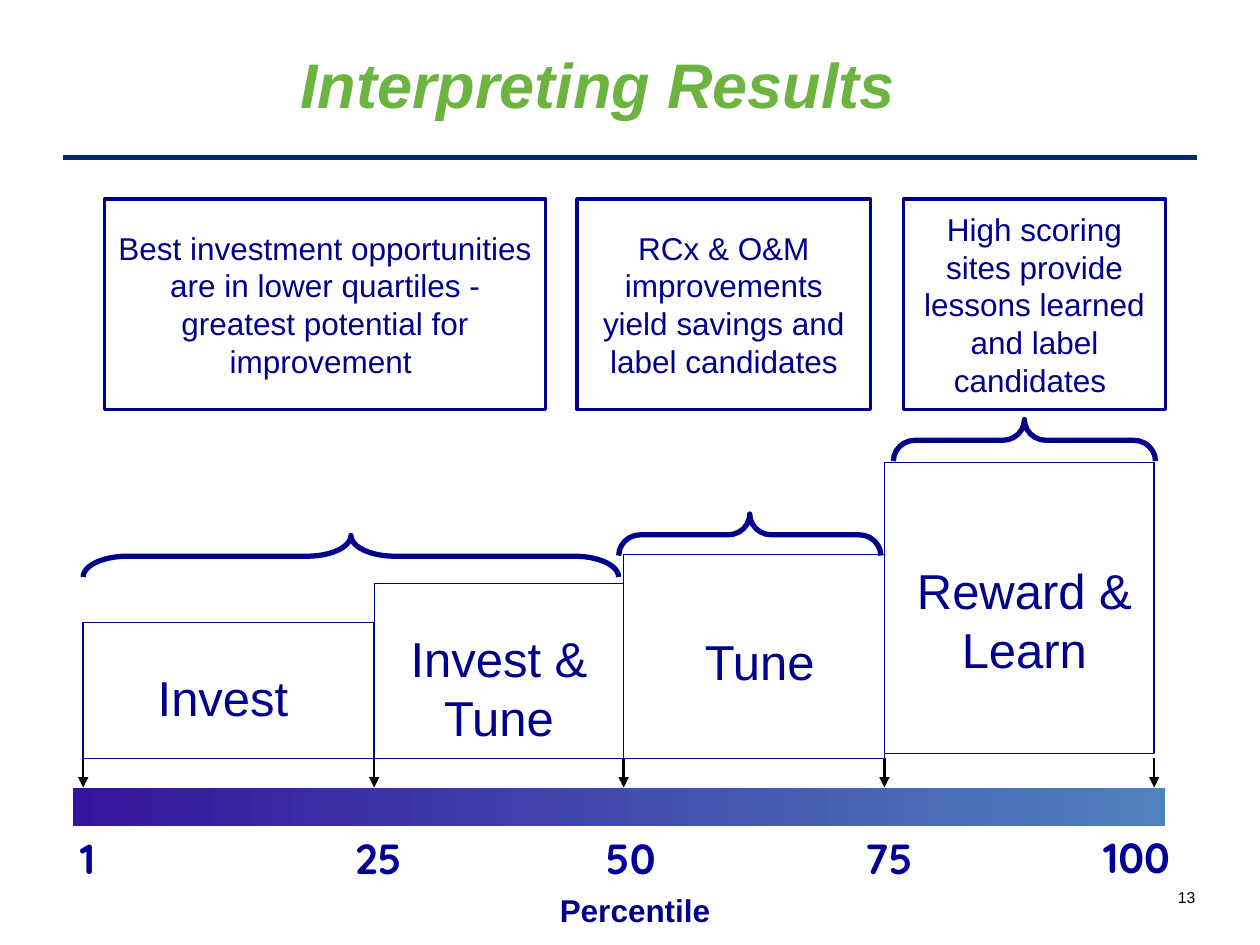
"""Build the Interpreting Results slide with python-pptx."""
from dataclasses import dataclass

import pptx
import pptx.dml.color
import pptx.enum.shapes
import pptx.enum.text
import pptx.oxml
import pptx.oxml.ns
import pptx.util

Inches = pptx.util.Inches
Pt = pptx.util.Pt
Color = pptx.dml.color.RGBColor.from_string
Kind = pptx.enum.shapes.MSO_SHAPE
Align = pptx.enum.text.PP_ALIGN
Anchor = pptx.enum.text.MSO_ANCHOR


@dataclass(frozen=True)
class Theme:
    """Colours, fonts and type sizes."""
    green: str = "6DB33F"
    rule: str = "032B6D"
    ink: str = "00008C"
    edge: str = "000080"
    mark: str = "000099"
    dark: str = "34149C"
    light: str = "4F81BD"
    black: str = "000000"
    white: str = "FFFFFF"
    face: str = "Arial"
    round: str = "Quicksand"
    head: int = 36
    step: int = 28
    tick: int = 24
    body: int = 18
    page: int = 9


@dataclass(frozen=True)
class Box:
    """A place on the slide in inches."""
    left: float
    top: float
    width: float
    height: float

    def frame(self) -> tuple:
        """Return the four lengths."""
        return tuple(Inches(v) for v in (self.left, self.top, self.width, self.height))


@dataclass(frozen=True)
class Step:
    """One quartile block with its label."""
    top: float
    base: float
    text: str
    label: Box


@dataclass(frozen=True)
class Note:
    """A framed comment."""
    left: float
    width: float
    text: str


@dataclass(frozen=True)
class Brace:
    """A brace that spans blocks."""
    left: float
    top: float
    width: float
    bend: float


THEME = Theme()
BASE = 6.02
BAR = Box(0.58, 6.25, 8.67, 0.31)
TICKS = [0.66, 2.97, 4.95, 7.02, 9.16]
MARKS = [
    ("1", Box(0.33, 6.56, 0.73, 0.5)),
    ("25", Box(2.64, 6.56, 0.73, 0.5)),
    ("50", Box(4.64, 6.56, 0.73, 0.5)),
    ("75", Box(6.69, 6.56, 0.73, 0.5)),
    ("100", Box(8.62, 6.55, 0.8, 0.5)),
]
STEPS = [
    Step(4.94, BASE, "Invest", Box(1.15, 5.25, 1.24, 0.57)),
    Step(4.63, BASE, "Invest & Tune", Box(2.97, 4.94, 1.98, 1.03)),
    Step(4.4, BASE, "Tune", Box(5.12, 4.96, 1.82, 0.57)),
    Step(3.67, 5.98, "Reward & Learn", Box(7.1, 4.4, 2.06, 1.03)),
]
NOTES = [
    Note(0.83, 3.5, "Best investment opportunities are in lower quartiles - "
                    "greatest potential for improvement "),
    Note(4.58, 2.33, "RCx & O&M improvements yield savings and label candidates"),
    Note(7.17, 2.08, "High scoring sites provide lessons learned and label candidates "),
]
BRACES = [
    Brace(0.66, 4.25, 4.25, 1.06),
    Brace(4.91, 4.08, 2.08, 0.52),
    Brace(7.09, 3.33, 2.08, 0.52),
]


def write(shape, text: str, size: int, color: str = THEME.ink, face: str = THEME.face,
          bold: bool = False, align=Align.CENTER) -> None:
    """Put one styled paragraph in a shape."""
    frame = shape.text_frame
    frame.word_wrap = True
    frame.text = text
    para = frame.paragraphs[0]
    para.alignment = align
    font = para.font
    font.name, font.size, font.bold = face, Pt(size), bold
    font.color.rgb = Color(color)


def label(slide, box: Box, text: str, size: int, wrap: bool = True, **style) -> None:
    """Add a text box."""
    shape = slide.shapes.add_textbox(*box.frame())
    write(shape, text, size, **style)
    shape.text_frame.word_wrap = wrap


def block(slide, box: Box, color: str, width: float, kind=Kind.RECTANGLE):
    """Add an unfilled outlined shape."""
    shape = slide.shapes.add_shape(kind, *box.frame())
    shape.shadow.inherit = False
    shape.fill.background()
    shape.line.color.rgb = Color(color)
    shape.line.width = Pt(width)
    return shape


def line(slide, start: tuple, end: tuple, color: str, width: float, arrow: bool = False) -> None:
    """Add a straight line, with an arrowhead on request."""
    ends = [Inches(v) for v in (*start, *end)]
    link = slide.shapes.add_connector(pptx.enum.shapes.MSO_CONNECTOR.STRAIGHT, *ends)
    link.line.color.rgb = Color(color)
    link.line.width = Pt(width)
    if arrow:
        tail = pptx.oxml.parse_xml(
            f'<a:tailEnd {pptx.oxml.ns.nsdecls("a")} type="triangle"/>')
        link.line._get_or_add_ln().append(tail)
    link._element.spPr.append(
        pptx.oxml.parse_xml(f'<a:effectLst {pptx.oxml.ns.nsdecls("a")}/>'))


def title(slide) -> None:
    """Place and style the title."""
    shape = slide.shapes.title
    shape.left, shape.top, shape.width, shape.height = Box(0.33, 0.25, 8.83, 0.92).frame()
    write(shape, "Interpreting Results", THEME.head, THEME.green, bold=True)
    shape.text_frame.paragraphs[0].font.italic = True
    shape.text_frame.vertical_anchor = Anchor.TOP
    shape.text_frame.margin_top = Inches(0.11)


def scale(slide) -> None:
    """Draw the percentile bar, its marks and arrows."""
    bar = block(slide, BAR, THEME.dark, 1)
    bar.line.fill.background()
    bar.fill.gradient()
    bar.fill.gradient_angle = 0
    for stop, spot, color in zip(bar.fill.gradient_stops, (0, 1), (THEME.dark, THEME.light)):
        stop.position = spot
        stop.color.rgb = Color(color)
    for x, (text, box) in zip(TICKS, MARKS):
        line(slide, (x, BASE), (x, BAR.top), THEME.black, 1.5, arrow=True)
        label(slide, box, text, THEME.tick, wrap=text != "100",
              color=THEME.mark, face=THEME.round, bold=True)
    label(slide, Box(1.58, 7.02, 6.92, 0.4), "Percentile", THEME.body, bold=True)


def main() -> None:
    """Build and save the slide."""
    deck = pptx.Presentation()
    deck.slide_width, deck.slide_height = Inches(10), Inches(7.5)
    slide = deck.slides.add_slide(deck.slide_layouts.get_by_name("Title Only"))
    line(slide, (0.5, 1.25), (9.5, 1.25), THEME.rule, 3)
    title(slide)
    scale(slide)
    for left, right, step in zip(TICKS, TICKS[1:], STEPS):
        block(slide, Box(left, step.top, right - left, step.base - step.top), THEME.edge, 0.75)
        label(slide, step.label, step.text, THEME.step, wrap=step.text != "Invest")
    for note in NOTES:
        shape = block(slide, Box(note.left, 1.58, note.width, 1.67), THEME.ink, 2)
        shape.fill.solid()
        shape.fill.fore_color.rgb = Color(THEME.white)
        write(shape, note.text, THEME.body)
        shape.text_frame.vertical_anchor = Anchor.MIDDLE
    for brace in BRACES:
        thick = 0.33
        shift = (brace.width - thick) / 2
        box = Box(brace.left + shift, brace.top - shift, thick, brace.width)
        shape = block(slide, box, THEME.ink, 3, Kind.LEFT_BRACE)
        shape.rotation = 90
        shape.adjustments[0] = brace.bend
    label(slide, Box(9.25, 7, 0.58, 0.33), "13", THEME.page,
          color=THEME.black, align=Align.LEFT)
    deck.save("out.pptx")


if __name__ == "__main__":
    main()
